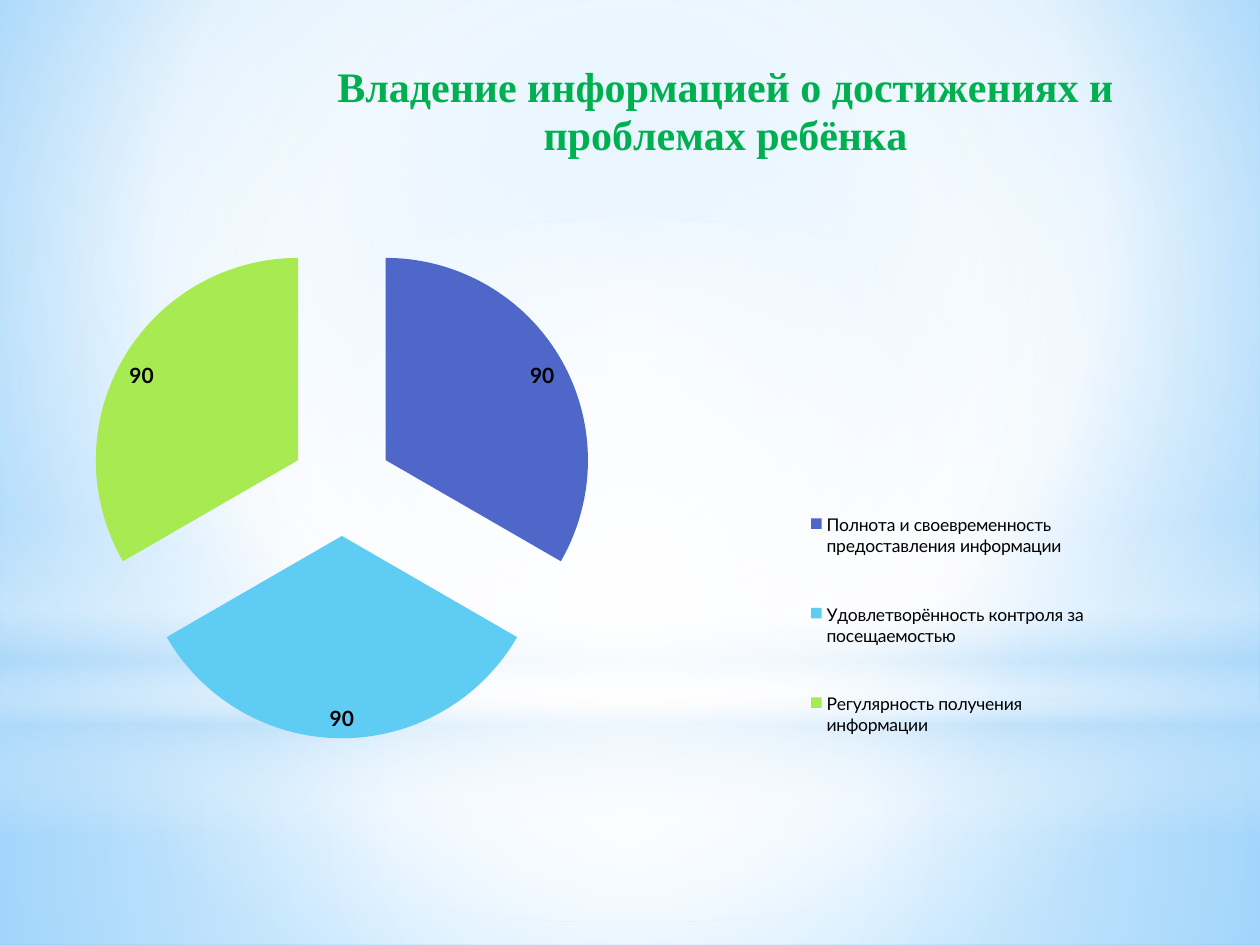
"""Build a slide with an exploded pie chart on a soft blue layered background."""
from pptx import Presentation
from pptx.chart.data import CategoryChartData
from pptx.dml.color import RGBColor
from pptx.enum.chart import XL_CHART_TYPE as ChartType
from pptx.enum.chart import XL_LABEL_POSITION as LabelPosition
from pptx.enum.chart import XL_LEGEND_POSITION as LegendPosition
from pptx.enum.shapes import MSO_SHAPE as Shape
from pptx.oxml import parse_xml
from pptx.oxml.ns import nsdecls, qn
from pptx.util import Pt

PX = 914400 // 126
SLIDE = (1260, 945)
COLORS = {
    "sky": "9ED5FF", "white": "FFFFFF", "azure": "5BB9FF", "haze": "B4DCFA",
    "title": "00B050", "text": "000000",
    "indigo": "4E67C8", "cyan": "5ECCF3", "lime": "A7EA52",
}
CENTRE = (50, 50, 50, 50)
BACKDROP = [(0, "sky", 100), (60, "white", 100), (100, "azure", 100)]
BACKDROP_FOCUS = (20, 10, 20, 60)
LAYERS = [
    (Shape.RECTANGLE, (0, 703, 1260, 242), CENTRE,
     [(0, "white", 91), (37, "white", 76), (100, "haze", 79)]),
    (Shape.RECTANGLE, (0, 0, 1260, 703), CENTRE,
     [(0, "white", 89), (48, "white", 62), (100, "haze", 79)]),
    (Shape.RECTANGLE, (0, 519, 1260, 315), None,
     [(0, "white", 0), (29, "white", 30), (45, "haze", 40),
      (55, "white", 26), (65, "haze", 60), (100, "white", 0)]),
    (Shape.OVAL, (0, 220, 1260, 703), CENTRE,
     [(0, "white", 100), (56, "white", 0)]),
]
TITLE = "Владение информацией о достижениях и проблемах ребёнка"
RATINGS = [
    ("Полнота и своевременность предоставления информации", 90, "indigo"),
    ("Удовлетворённость контроля за посещаемостью", 90, "cyan"),
    ("Регулярность получения информации", 90, "lime"),
]
CHART_BOX = (15, 16, 1211, 903)
TITLE_PLACE = {"x": 0.26, "y": 0.04}
PLOT_PLACE = {"x": 0.03, "y": 0.24, "w": 0.48, "h": 0.56}
LEGEND_PLACE = {"x": 0.65, "y": 0.5, "w": 0.24, "h": 0.35}


def emu(box):
    return [length * PX for length in box]


def rgb(name):
    return RGBColor.from_string(COLORS[name])


def paint_gradient(fill, element, stops, focus):
    fill.gradient()
    old = next(element.iter(qn("a:gradFill")))
    stop_xml = "".join(
        f'<a:gs pos="{pos * 1000}"><a:srgbClr val="{COLORS[name]}">'
        f'<a:alpha val="{alpha * 1000}"/></a:srgbClr></a:gs>'
        for pos, name, alpha in stops)
    if focus:
        sides = " ".join(f'{side}="{part * 1000}"' for side, part in zip("ltrb", focus))
        course = f'<a:path path="circle"><a:fillToRect {sides}/></a:path>'
    else:
        course = '<a:lin ang="5400000" scaled="0"/>'
    gradient = parse_xml(f'<a:gradFill {nsdecls("a")} rotWithShape="1">'
                         f'<a:gsLst>{stop_xml}</a:gsLst>{course}</a:gradFill>')
    old.getparent().replace(old, gradient)


def place(part, position, inner=False):
    target = '<c:layoutTarget val="inner"/>' if inner else ""
    modes = "".join(f'<c:{axis}Mode val="edge"/>' for axis in "xy")
    values = "".join(f'<c:{key} val="{value}"/>' for key, value in position.items())
    for old in part.findall(qn("c:layout")):
        part.remove(old)
    layout = parse_xml(f'<c:layout {nsdecls("c")}><c:manualLayout>'
                       f'{target}{modes}{values}</c:manualLayout></c:layout>')
    before = [child for child in part if child.tag in (qn("c:tx"), qn("c:legendPos"))]
    part.insert(len(before), layout)


def style(font, size, color, family, bold=False):
    font.size, font.name, font.bold = Pt(size), family, bold
    font.color.rgb = rgb(color)


def add_ratings(slide):
    data = CategoryChartData()
    data.categories = [label for label, _, _ in RATINGS]
    data.add_series("Series 1", [value for _, value, _ in RATINGS])
    chart = slide.shapes.add_chart(ChartType.PIE, *emu(CHART_BOX), data).chart
    style(chart.font, 10, "text", "Lato")

    heading = chart.chart_title.text_frame
    heading.text = TITLE
    style(heading.paragraphs[0].runs[0].font, 24, "title", "Times New Roman", True)
    chart.chart_title.include_in_layout = False

    chart.has_legend = True
    chart.legend.position = LegendPosition.RIGHT
    chart.legend.include_in_layout = False
    style(chart.legend.font, 10, "text", "Lato")

    pie = chart.plots[0]
    pie.vary_by_categories = True
    ratings = pie.series[0]
    for index, (_, _, color) in enumerate(RATINGS):
        slice_fill = ratings.points[index].format.fill
        slice_fill.solid()
        slice_fill.fore_color.rgb = rgb(color)
    explosion = parse_xml(f'<c:explosion {nsdecls("c")} val="25"/>')
    next(ratings._element.iter(qn("c:dPt"))).addprevious(explosion)
    labels = ratings.data_labels
    labels.show_value = True
    labels.position = LabelPosition.INSIDE_END
    style(labels.font, 12, "text", "Lato", True)

    root = chart._chartSpace.chart
    place(root.find(qn("c:title")), TITLE_PLACE)
    place(root.find(qn("c:plotArea")), PLOT_PLACE, inner=True)
    place(root.find(qn("c:legend")), LEGEND_PLACE)


def main():
    deck = Presentation()
    deck.slide_width, deck.slide_height = emu(SLIDE)
    slide = deck.slides.add_slide(deck.slide_layouts[6])
    paint_gradient(slide.background.fill, slide.element, BACKDROP, BACKDROP_FOCUS)
    for outline, box, focus, stops in LAYERS:
        layer = slide.shapes.add_shape(outline, *emu(box))
        layer.shadow.inherit = False
        layer.line.fill.background()
        paint_gradient(layer.fill, layer.element, stops, focus)
    add_ratings(slide)
    deck.save("out.pptx")


if __name__ == "__main__":
    main()
